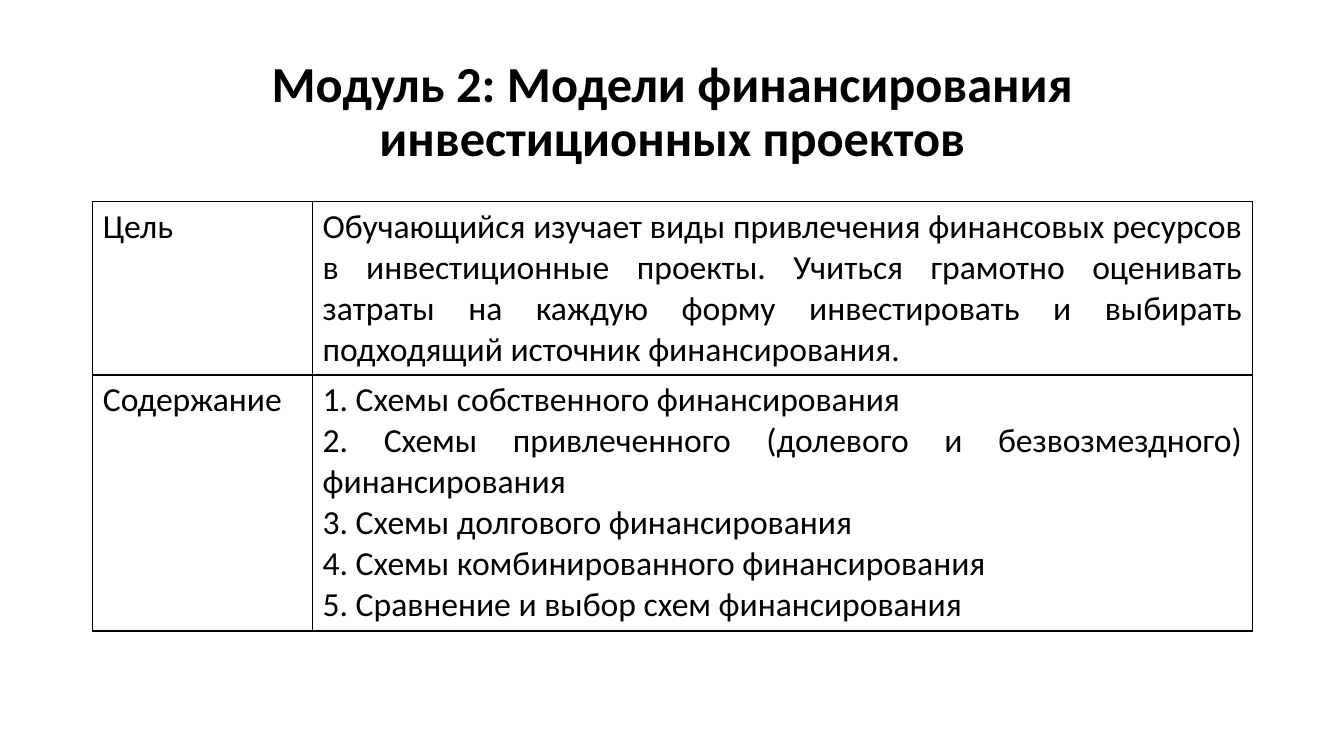
from dataclasses import dataclass

from lxml.etree import SubElement as Sub
from pptx import Presentation
from pptx.dml.color import RGBColor
from pptx.enum.text import MSO_ANCHOR as Anchor, PP_ALIGN as Align
from pptx.oxml.ns import qn
from pptx.slide import Slide
from pptx.table import _Cell as Cell
from pptx.text.text import TextFrame as Frame
from pptx.util import Emu, Pt

PX = 9144
BLACK = RGBColor(0, 0, 0)
WHITE = RGBColor(255, 255, 255)
FONT = "Calibri"
COLS = (218, 932)


@dataclass(frozen=True)
class Row:
    label: str
    lines: tuple[str, ...]
    height: int


ROWS = (
    Row("Цель", (
        "Обучающийся изучает виды привлечения финансовых ресурсов "
        "в инвестиционные проекты. Учиться грамотно оценивать "
        "затраты на каждую форму инвестировать и выбирать "
        "подходящий источник финансирования.",
    ), 172),
    Row("Содержание", (
        "1. Схемы собственного финансирования",
        "2. Схемы привлеченного (долевого и безвозмездного) финансирования",
        "3. Схемы долгового финансирования",
        "4. Схемы комбинированного финансирования",
        "5. Сравнение и выбор схем финансирования",
    ), 254),
)


def px(count: int) -> Emu:
    return Emu(count * PX)


def write(frame: Frame, *lines: str, size: int = 24, bold: bool = False,
          align: Align = Align.LEFT, space: float = 1.0) -> None:
    frame.word_wrap = True
    for num, line in enumerate(lines):
        para = frame.add_paragraph() if num else frame.paragraphs[0]
        para.alignment = align
        para.line_spacing = space
        run = para.add_run()
        run.text = line
        run.font.name = FONT
        run.font.size = Pt(size)
        run.font.bold = bold
        run.font.color.rgb = BLACK


def frame_cell(cell: Cell) -> None:
    cell.fill.solid()
    cell.fill.fore_color.rgb = WHITE
    props = cell._tc.get_or_add_tcPr()
    for spot, side in enumerate(("lnL", "lnR", "lnT", "lnB")):
        line = Sub(props, qn(f"a:{side}"), w=str(Pt(1)))
        Sub(Sub(line, qn("a:solidFill")), qn("a:srgbClr"), val=str(BLACK))
        props.insert(spot, line)


def add_title(slide: Slide) -> None:
    box = slide.shapes.add_textbox(px(92), px(40), px(1150), px(145))
    box.text_frame.vertical_anchor = Anchor.MIDDLE
    write(box.text_frame,
          "Модуль 2: Модели финансирования инвестиционных проектов",
          size=36, bold=True, align=Align.CENTER, space=0.9)


def add_grid(slide: Slide) -> None:
    high = sum(row.height for row in ROWS)
    table = slide.shapes.add_table(
        len(ROWS), len(COLS), px(92), px(200), px(sum(COLS)), px(high)).table
    table.first_row = False
    table.horz_banding = False
    for col, width in zip(table.columns, COLS):
        col.width = px(width)
    for num, row in enumerate(ROWS):
        table.rows[num].height = px(row.height)
        write(table.cell(num, 0).text_frame, row.label)
        write(table.cell(num, 1).text_frame, *row.lines, align=Align.JUSTIFY)
    for cell in table.iter_cells():
        frame_cell(cell)


def main() -> None:
    deck = Presentation()
    deck.slide_width = px(1333)
    deck.slide_height = px(750)
    slide = deck.slides.add_slide(deck.slide_layouts[6])
    add_title(slide)
    add_grid(slide)
    deck.save("out.pptx")


if __name__ == "__main__":
    main()
